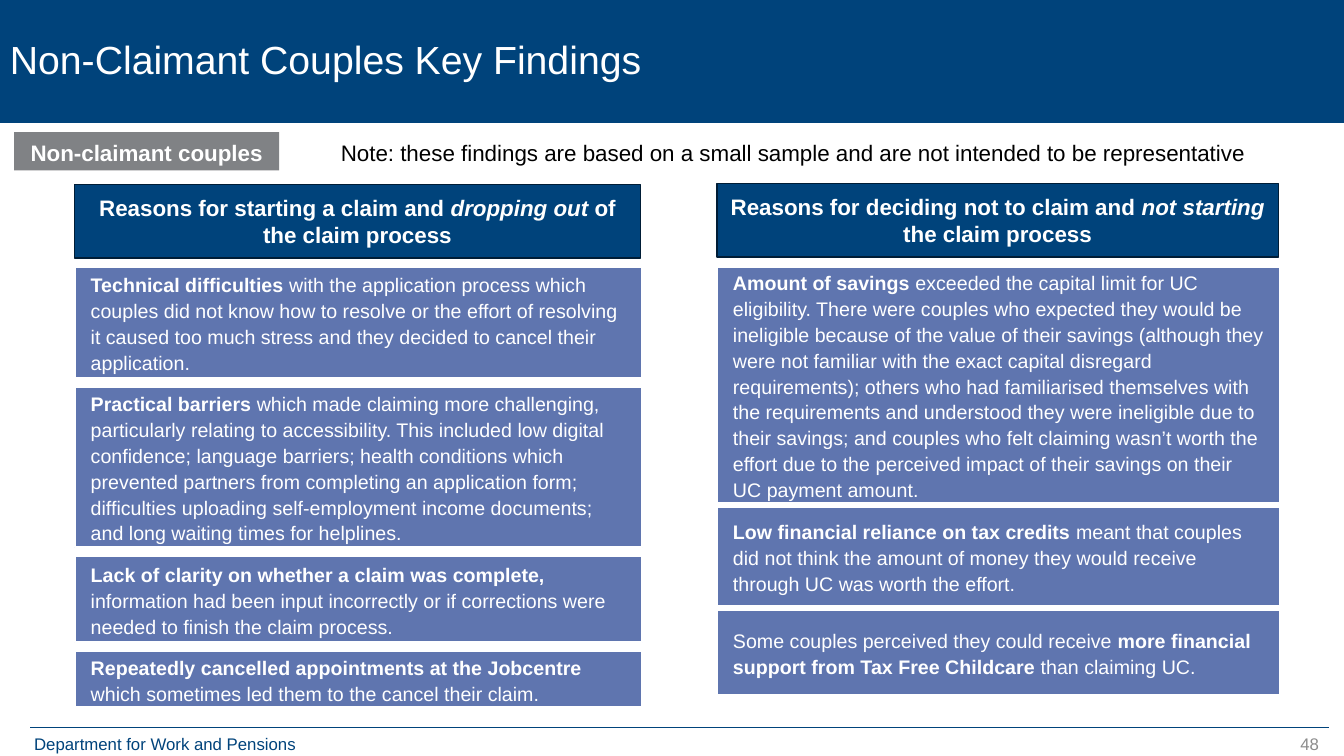
from pptx import Presentation
from pptx.dml.color import RGBColor
from pptx.enum.shapes import MSO_CONNECTOR, MSO_SHAPE
from pptx.enum.text import MSO_ANCHOR, PP_ALIGN
from pptx.oxml.ns import qn
from pptx.util import Inches, Pt
from lxml import etree

RECTANGLE = MSO_SHAPE.RECTANGLE
STRAIGHT = MSO_CONNECTOR.STRAIGHT
TOP, MIDDLE = MSO_ANCHOR.TOP, MSO_ANCHOR.MIDDLE
LEFT, CENTER, RIGHT = PP_ALIGN.LEFT, PP_ALIGN.CENTER, PP_ALIGN.RIGHT

NAVY, DARK_NAVY, SLATE, GREY = "00437B", "001D36", "5F75AF", "808285"
WHITE, BLACK, PALE_GREY = "FFFFFF", "000000", "8C8C8C"
TIGHT = (0.1, 0.05)
ROOMY = (0.16, 0.08)
SPACED = {"line_spacing": 1.1, "space_before": Pt(24)}


def color(value):
    return RGBColor.from_string(value)


class FindingsSlide:
    font = "Arial"

    def __init__(self, slide):
        self.shapes = slide.shapes

    def set_text(self, shape, runs, size, ink, align=LEFT, anchor=MIDDLE,
                 inset=TIGHT, spacing=None):
        frame = shape.text_frame
        across, down = map(Inches, inset)
        frame_format = {"word_wrap": True, "vertical_anchor": anchor,
                        "margin_left": across, "margin_right": across,
                        "margin_top": down, "margin_bottom": down}
        for name, value in frame_format.items():
            setattr(frame, name, value)
        paragraph = frame.paragraphs[0]
        for name, value in {"alignment": align, **(spacing or {})}.items():
            setattr(paragraph, name, value)
        for words, style in runs:
            run = paragraph.add_run()
            run.text = words
            run_format = {"name": self.font, "size": Pt(size),
                          "bold": "b" in style, "italic": "i" in style}
            for name, value in run_format.items():
                setattr(run.font, name, value)
            run.font.color.rgb = color(ink)

    def box(self, place, fill, runs, size, outline=None, width=1, **text):
        shape = self.shapes.add_shape(RECTANGLE, *map(Inches, place))
        shape.shadow.inherit = False
        shape.fill.solid()
        shape.fill.fore_color.rgb = color(fill)
        if outline:
            shape.line.color.rgb = color(outline)
            shape.line.width = Pt(width)
        else:
            shape.line.fill.background()
        self.set_text(shape, runs, size, WHITE, **text)

    def label(self, place, runs, size, ink, **text):
        self.set_text(self.shapes.add_textbox(*map(Inches, place)),
                      runs, size, ink, **text)

    def rule(self, left, right, top, ink, width):
        line = self.shapes.add_connector(
            STRAIGHT, *map(Inches, (left, top, right, top)))
        line.line.color.rgb = color(ink)
        line.line.width = Pt(width)
        etree.SubElement(line._element.spPr, qn("a:effectLst"))

    def column(self, left, top, width, gap, findings):
        for height, runs in findings:
            self.box((left, top, width, height), SLATE, runs, 14, WHITE, 1.5,
                     inset=ROOMY, spacing=SPACED)
            top += height + gap


DROPPING_OUT = [
    (1.1, [("Technical difficulties ", "b"),
           ("with the application process which couples did not know how to "
            "resolve or the effort of resolving it caused too much stress and "
            "they decided to cancel their application.", "")]),
    (1.59, [("Practical barriers ", "b"),
            ("which made claiming more challenging, particularly relating to "
             "accessibility. This included low digital confidence; language "
             "barriers; health conditions which prevented partners from "
             "completing an application form; difficulties uploading "
             "self-employment income documents; and long waiting times for "
             "helplines.", "")]),
    (0.85, [("Lack of clarity on whether a claim was complete, ", "b"),
            ("information had been input incorrectly or if corrections were "
             "needed to finish the claim process.", "")]),
    (0.56, [("Repeatedly cancelled appointments at the Jobcentre ", "b"),
            ("which sometimes led them to the cancel their claim.", "")]),
]
NOT_STARTING = [
    (2.34, [("Amount of savings ", "b"),
            ("exceeded the capital limit for UC eligibility. There were "
             "couples who expected they would be ineligible because of the "
             "value of their savings (although they were not familiar with "
             "the exact capital disregard requirements); others who had "
             "familiarised themselves with the requirements and understood "
             "they were ineligible due to their savings; and couples who felt "
             "claiming wasn’t worth the effort due to the perceived impact of "
             "their savings on their UC payment amount.", "")]),
    (0.98, [("Low financial reliance on tax credits ", "b"),
            ("meant that couples did not think the amount of money they would "
             "receive through UC was worth the effort.", "")]),
    (0.85, [("Some couples perceived they could receive ", ""),
            ("more financial support from Tax Free Childcare ", "b"),
            ("than claiming UC.", "")]),
]


def main():
    deck = Presentation()
    deck.slide_width, deck.slide_height = Inches(13.33), Inches(7.5)
    page = FindingsSlide(deck.slides.add_slide(deck.slide_layouts[6]))

    page.label((0.24, 7.23, 3.23, 0.3),
               [("Department for Work and Pensions", "")], 12, NAVY, anchor=TOP)
    page.rule(0.3, 13.18, 7.22, NAVY, 0.5)
    page.label((10.18, 7.23, 3, 0.4), [("48", "")], 12, PALE_GREY,
               align=RIGHT, anchor=TOP)

    page.box((0, 0, 13.33, 1.22), NAVY,
             [("Non-Claimant Couples Key Findings", "")], 28,
             spacing={"line_spacing": 0.9})
    page.box((0.14, 1.31, 2.63, 0.38), GREY, [("Non-claimant couples", "b")],
             16, align=CENTER, inset=ROOMY, spacing=SPACED)
    page.label((3.02, 1.31, 9.69, 0.39),
               [("Note: these findings are based on a small sample and are not "
                 "intended to be representative", "")],
               16, BLACK, align=CENTER, inset=ROOMY, spacing=SPACED)

    page.box((0.74, 1.83, 5.61, 0.73), NAVY,
             [("Reasons for starting a claim and ", "b"),
              ("dropping out ", "bi"), ("of the claim process", "b")],
             16, DARK_NAVY, align=CENTER)
    page.box((7.11, 1.82, 5.57, 0.73), NAVY,
             [("Reasons for deciding not to claim and ", "b"),
              ("not starting ", "bi"), ("the claim process", "b")],
             16, DARK_NAVY, align=CENTER)
    page.column(0.74, 2.65, 5.63, 0.09, DROPPING_OUT)
    page.column(7.11, 2.65, 5.59, 0.04, NOT_STARTING)

    deck.save("out.pptx")


if __name__ == "__main__":
    main()
